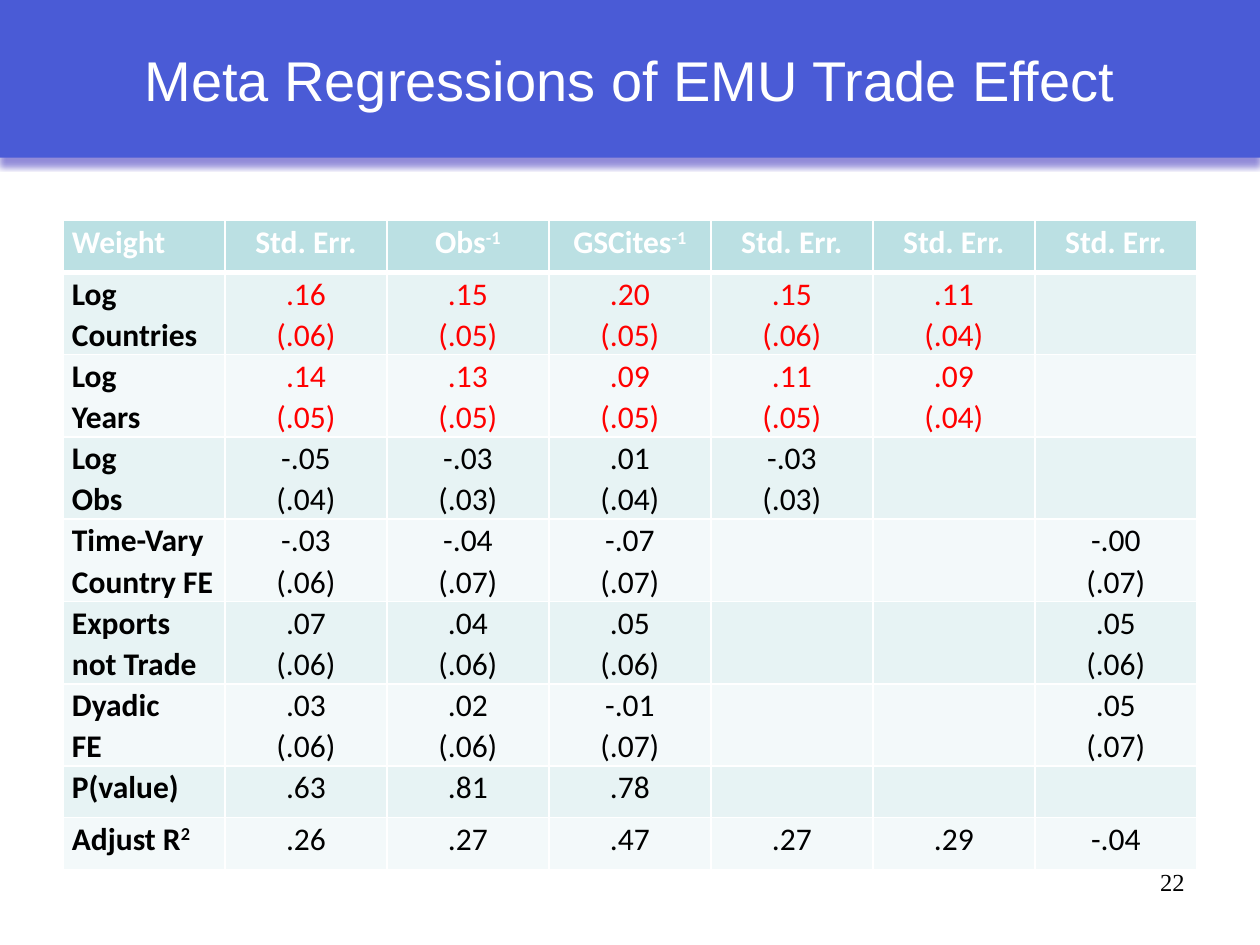
import pptx
import pptx.util
import pptx.dml.color
import pptx.enum.text
import pptx.oxml
import pptx.oxml.ns

Cm, Pt = pptx.util.Cm, pptx.util.Pt
ALIGN = pptx.enum.text.PP_ALIGN
ANCHOR = pptx.enum.text.MSO_ANCHOR
HUES = {
    "banner": "4A5BD6", "shade": "4A3FBF", "head": "BBE0E3",
    "odd": "E7F3F4", "even": "F3F9FA",
    "white": "FFFFFF", "black": "000000", "red": "FF0000",
}
# "^" starts a superscript, "|" starts a new paragraph
HEAD = ["Weight", "Std. Err.", "Obs^-1", "GSCites^-1"] + ["Std. Err."] * 3
ROWS = [
    ["Log Countries", ".16|(.06)", ".15|(.05)", ".20|(.05)", ".15|(.06)", ".11|(.04)", ""],
    ["Log|Years", ".14|(.05)", ".13|(.05)", ".09|(.05)", ".11|(.05)", ".09|(.04)", ""],
    ["Log|Obs", "-.05|(.04)", "-.03|(.03)", ".01|(.04)", "-.03|(.03)", "", ""],
    ["Time-Vary|Country FE", "-.03|(.06)", "-.04|(.07)", "-.07|(.07)", "", "", "-.00|(.07)"],
    ["Exports|not Trade", ".07|(.06)", ".04|(.06)", ".05|(.06)", "", "", ".05|(.06)"],
    ["Dyadic|FE", ".03|(.06)", ".02|(.06)", "-.01|(.07)", "", "", ".05|(.07)"],
    ["P(value)", ".63", ".81", ".78", "", "", ""],
    ["Adjust R^2", ".26", ".27", ".47", ".27", ".29", "-.04"],
]
RED_ROWS = (1, 2)


def hue(name):
    return pptx.dml.color.RGBColor.from_string(HUES[name])


def paint(item, name):
    item.fill.solid()
    item.fill.fore_color.rgb = hue(name)


def place(shape, box):
    shape.left, shape.top, shape.width, shape.height = map(Cm, box)


def add_run(para, text, face, size, name, bold=False):
    run = para.add_run()
    run.text = text
    font = run.font
    font.name, font.size, font.bold = face, Pt(size), bold
    font.color.rgb = hue(name)
    return run


def add_title(slide, box, text):
    title = slide.shapes.title
    place(title, box)
    paint(title, "banner")
    frame = title.text_frame
    frame.word_wrap = True
    frame.vertical_anchor = ANCHOR.MIDDLE
    para = frame.paragraphs[0]
    para.alignment = ALIGN.CENTER
    add_run(para, text, "Arial", 32, "white")
    # Soft shadow under the banner
    title._element.spPr.append(pptx.oxml.parse_xml(
        f'<a:effectLst {pptx.oxml.ns.nsdecls("a")}>'
        '<a:outerShdw blurRad="40000" dist="60000" dir="5400000" rotWithShape="0">'
        f'<a:srgbClr val="{HUES["shade"]}"><a:alpha val="60000"/></a:srgbClr>'
        '</a:outerShdw></a:effectLst>'))


def edge(cell, side, width):
    cell._tc.get_or_add_tcPr().append(pptx.oxml.parse_xml(
        f'<a:{side} {pptx.oxml.ns.nsdecls("a")} w="{Pt(width)}"><a:solidFill>'
        f'<a:srgbClr val="{HUES["white"]}"/></a:solidFill></a:{side}>'))


def fill_cell(cell, text, row, col):
    cell.margin_left = cell.margin_right = Cm(0.18)
    cell.margin_top = cell.margin_bottom = 0
    for side in ("lnL", "lnR", "lnT", "lnB"):
        thick = (row, side) in ((0, "lnB"), (1, "lnT"))
        edge(cell, side, 3 if thick else 1)
    paint(cell, "head" if row == 0 else "odd" if row % 2 else "even")

    ink = "white" if row == 0 else "red" if row in RED_ROWS and col else "black"
    bold = row == 0 or col == 0
    frame = cell.text_frame
    for num, line in enumerate(text.split("|")):
        para = frame.add_paragraph() if num else frame.paragraphs[0]
        para.alignment = ALIGN.CENTER if col else ALIGN.LEFT
        para.line_spacing = 1.07
        para.font.size = Pt(18)
        base, _, power = line.partition("^")
        if base:
            add_run(para, base, "Calibri", 18, ink, bold)
        if power:
            run = add_run(para, power, "Calibri", 18, ink, bold)
            run._r.get_or_add_rPr().set("baseline", "30000")


def add_grid(slide, box):
    data = [HEAD] + ROWS
    left, top, width, height = map(Cm, box)
    table = slide.shapes.add_table(
        len(data), len(HEAD), left, top, width, height).table
    table.horz_banding = False
    for col in table.columns:
        col.width = width // len(HEAD)
    for row, texts in enumerate(data):
        table.rows[row].height = height // len(data)
        for col, text in enumerate(texts):
            fill_cell(table.cell(row, col), text, row, col)


def add_page(slide, box, text):
    frame = slide.shapes.add_textbox(*map(Cm, box)).text_frame
    frame.word_wrap = True
    para = frame.paragraphs[0]
    para.alignment = ALIGN.RIGHT
    add_run(para, text, "Times New Roman", 14, "black")


def main():
    deck = pptx.Presentation()
    deck.slide_width, deck.slide_height = Cm(25.4), Cm(19.05)
    slide = deck.slides.add_slide(deck.slide_layouts[5])
    add_title(slide, (0, 0, 25.4, 3.18), "Meta Regressions of EMU Trade Effect")
    add_grid(slide, (1.27, 4.45, 22.86, 9.36))
    add_page(slide, (18.2, 17.35, 5.93, 1.32), "22")
    deck.save("out.pptx")


if __name__ == "__main__":
    main()
